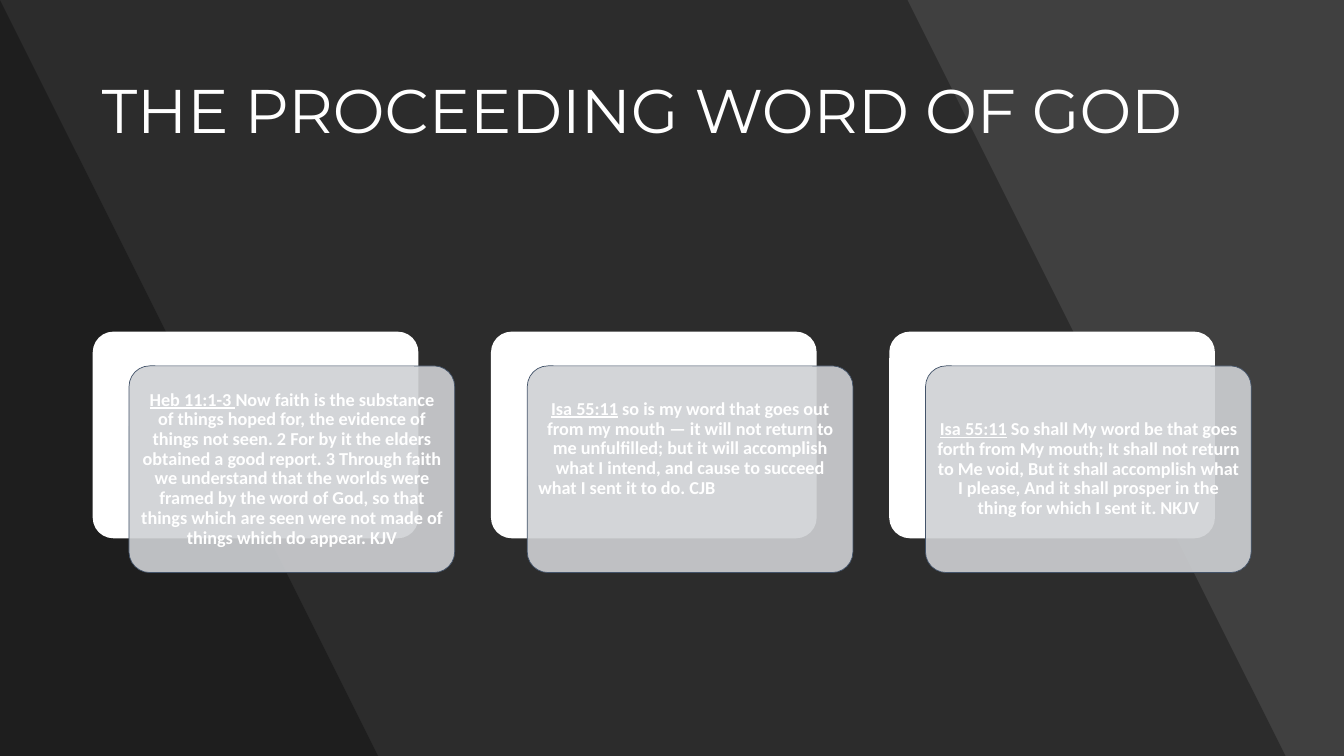
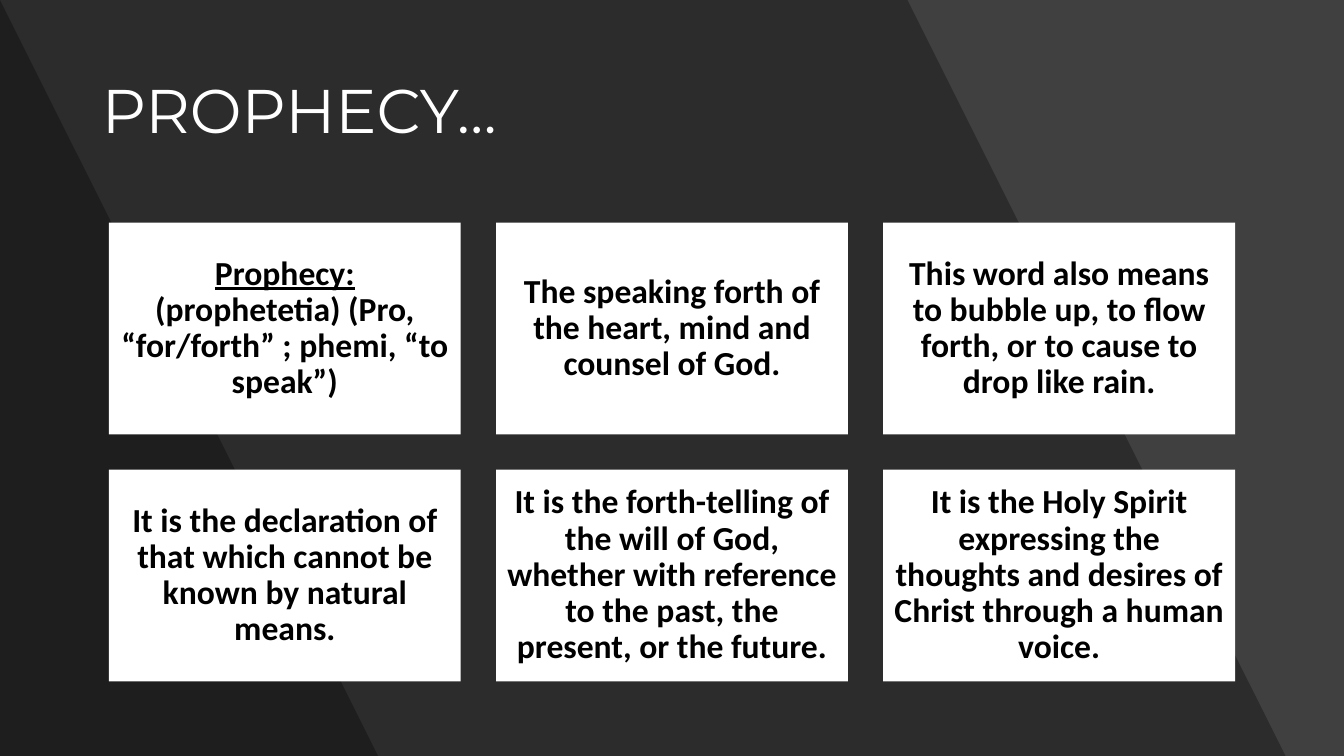
from lxml import etree
from pptx import Presentation
from pptx.dml.color import RGBColor
from pptx.enum.shapes import MSO_SHAPE
from pptx.enum.text import MSO_ANCHOR, MSO_AUTO_SIZE, PP_ALIGN
from pptx.oxml.ns import qn
from pptx.util import Inches, Pt

RECTANGLE, ROUNDED = MSO_SHAPE.RECTANGLE, MSO_SHAPE.ROUNDED_RECTANGLE
MIDDLE, NO_AUTOFIT = MSO_ANCHOR.MIDDLE, MSO_AUTO_SIZE.NONE
LEFT, CENTER = PP_ALIGN.LEFT, PP_ALIGN.CENTER

# Shared style
WIDTH, HEIGHT = 13.33, 7.5
BACKGROUND, WHITE, BLACK = "404040", "FFFFFF", "000000"
CARD_FILL, CARD_LINE = "CFD1D4", "44546A"
TITLE_FONT, BODY_FONT = "Montserrat", "Calibri"
TITLE_BOX = (0.91, 0.4, 11.51, 1.45)
BANDS = [(9.42, 12.89), (0.44, 3.92)]  # right edge at the top and at the bottom
LINE_SPACING = 0.9
TITLE_ONLY = 5

# Each text is a list of paragraphs: (alignment, underlined lead, rest)
VERSES = [
    [(CENTER, "Heb 11:1-3 ",
      "Now faith is the substance of things hoped for, the evidence of things not seen. "
      "2 For by it the elders obtained a good report. 3 Through faith we understand that "
      "the worlds were framed by the word of God, so that things which are seen were not "
      "made of things which do appear. KJV")],
    [(CENTER, "Isa 55:11",
      " so is my word that goes out from my mouth — it will not return to me unfulfilled; "
      "but it will accomplish what I intend, and cause to succeed"),
     (LEFT, "", "what I sent it to do. CJB")],
    [(CENTER, "Isa 55:11",
      " So shall My word be that goes forth from My mouth; It shall not return to Me void, "
      "But it shall accomplish what I please, And it shall prosper in the thing for which "
      "I sent it. NKJV")],
]
VERSE_BOTTOM_INSETS = [0.05, 0.45, 0.05]
MEANINGS = [
    ("Prophecy: ", "(prophetetia) (Pro, “for/forth” ; phemi, “to speak”)"),
    ("", "The speaking forth of the heart, mind and counsel of God."),
    ("", "This word also means to bubble up, to flow forth, or to cause to drop like rain."),
    ("", "It is the declaration of that which cannot be known by natural means."),
    ("", "It is the forth-telling of the will of God, whether with reference to the past, "
         "the present, or the future."),
    ("", "It is the Holy Spirit expressing the thoughts and desires of Christ through "
         "a human voice."),
]


def color(hex_string):
    return RGBColor.from_string(hex_string)


def paint(shape, fill, opacity=100, line=None):
    shape.shadow.inherit = False
    shape.fill.solid()
    shape.fill.fore_color.rgb = color(fill)
    if opacity < 100:
        fill_color = shape.element.spPr.find(".//" + qn("a:srgbClr"))
        etree.SubElement(fill_color, qn("a:alpha"), val=str(opacity * 1000))
    if line:
        shape.line.color.rgb = color(line)
        shape.line.width = Pt(0.5)
    else:
        shape.line.fill.background()


def add_box(slide, kind, box, fill, opacity=100, line=None):
    shape = slide.shapes.add_shape(kind, *map(Inches, box))
    paint(shape, fill, opacity, line)
    if kind == ROUNDED:
        shape.adjustments[0] = 0.1
    return shape


def write(shape, paragraphs, size, text_color, inset, bottom_inset):
    frame = shape.text_frame
    frame.word_wrap = True
    frame.vertical_anchor = MIDDLE
    frame.margin_left = frame.margin_right = frame.margin_top = Inches(inset)
    frame.margin_bottom = Inches(bottom_inset)
    for index, (alignment, lead, rest) in enumerate(paragraphs):
        paragraph = frame.paragraphs[0] if index == 0 else frame.add_paragraph()
        paragraph.alignment = alignment
        paragraph.line_spacing = LINE_SPACING
        font = paragraph.font
        font.name, font.size, font.bold = BODY_FONT, Pt(size), True
        font.color.rgb = color(text_color)
        if lead:
            run = paragraph.add_run()
            run.text = lead
            run.font.underline = True
        paragraph.add_run().text = rest


def add_bands(slide):
    """Two slanted translucent bands behind the title."""
    for top_right, bottom_right in BANDS:
        builder = slide.shapes.build_freeform(0, 0, scale=Inches(1))
        builder.add_line_segments(
            [(top_right, 0), (bottom_right, HEIGHT), (0, HEIGHT)], close=True)
        band = builder.convert_to_shape()
        paint(band, BLACK, opacity=30)
        slide.shapes.title.element.addprevious(band.element)


def add_titled_slide(presentation, text):
    slide = presentation.slides.add_slide(presentation.slide_layouts[TITLE_ONLY])
    title = slide.shapes.title
    title.left, title.top, title.width, title.height = map(Inches, TITLE_BOX)
    frame = title.text_frame
    frame.text = text
    frame.word_wrap = True
    frame.auto_size = NO_AUTOFIT
    frame.vertical_anchor = MIDDLE
    paragraph = frame.paragraphs[0]
    paragraph.alignment = LEFT
    paragraph.line_spacing = LINE_SPACING
    paragraph.font.name, paragraph.font.size = TITLE_FONT, Pt(44)
    paragraph.font.color.rgb = color(WHITE)
    add_bands(slide)
    return slide


def add_verse_cards(slide, left, top, width, height, pitch):
    """A row of cards, each over a white card offset up and to the left."""
    for column, (verse, bottom) in enumerate(zip(VERSES, VERSE_BOTTOM_INSETS)):
        x = left + column * pitch
        add_box(slide, ROUNDED, (x, top, width, height), WHITE)
        card = add_box(slide, ROUNDED, (x + 0.36, top + 0.34, width, height),
                       CARD_FILL, opacity=90, line=CARD_LINE)
        write(card, verse, 13, WHITE, 0.05, bottom)


def add_meaning_grid(slide, left, top, width, height, gap, columns=3):
    for index, (lead, rest) in enumerate(MEANINGS):
        row, column = divmod(index, columns)
        box = (left + column * (width + gap), top + row * (height + gap), width, height)
        tile = add_box(slide, RECTANGLE, box, WHITE)
        write(tile, [(CENTER, lead, rest)], 24, BLACK, 0.1, 0.1)


def main():
    presentation = Presentation()
    presentation.slide_width, presentation.slide_height = Inches(WIDTH), Inches(HEIGHT)
    background = presentation.slide_master.background.fill
    background.solid()
    background.fore_color.rgb = color(BACKGROUND)

    verses = add_titled_slide(presentation, "THE PROCEEDING WORD OF GOD")
    add_verse_cards(verses, 0.92, 3.29, 3.23, 2.05, pitch=3.95)

    meanings = add_titled_slide(presentation, "PROPHECY…")
    add_meaning_grid(meanings, 1.08, 2.21, 3.49, 2.1, gap=0.35)

    presentation.save("out.pptx")


if __name__ == "__main__":
    main()
